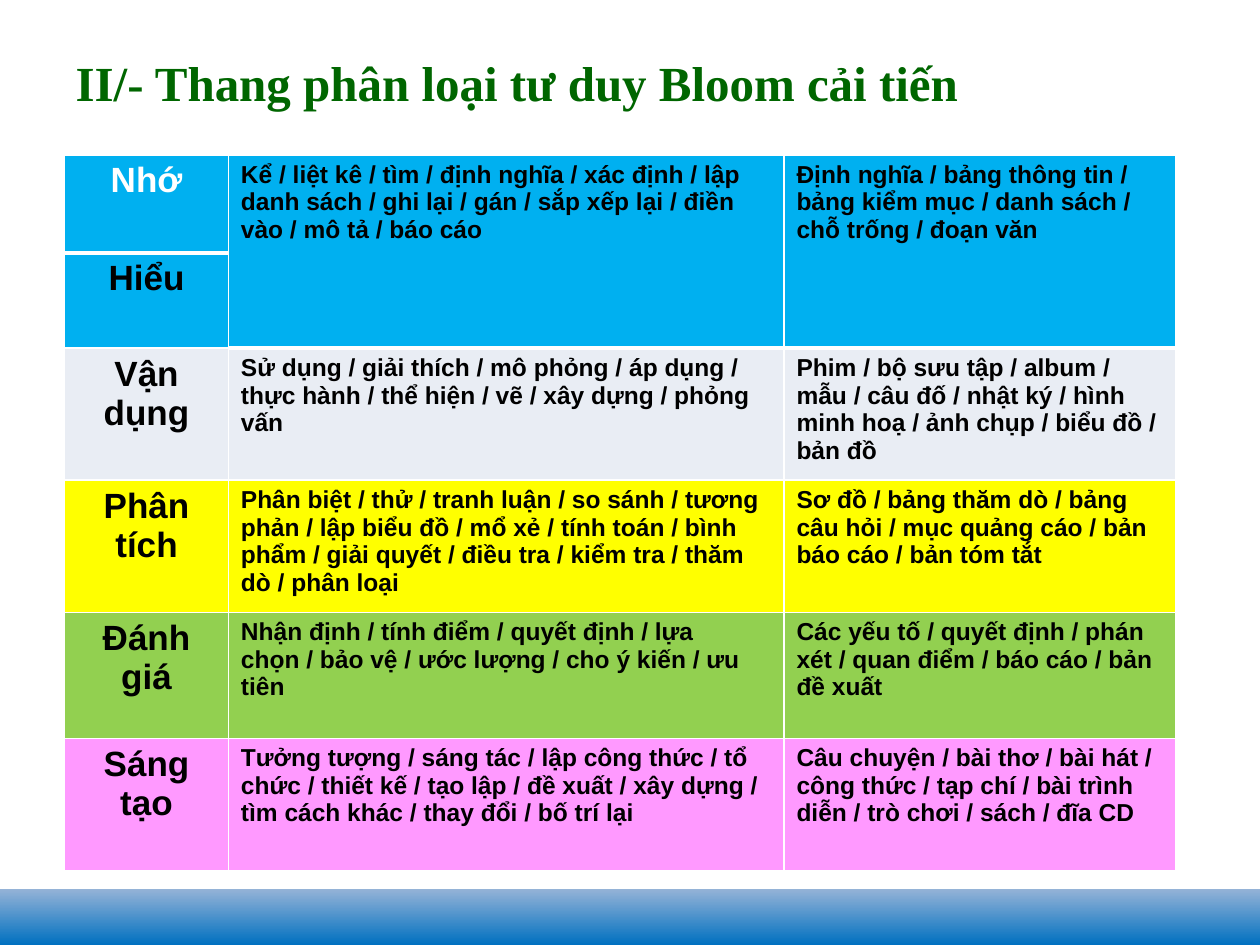
"""Build the slide on the revised Bloom scale of thinking."""
from dataclasses import dataclass

from lxml.etree import SubElement
from pptx import Presentation
from pptx.dml.color import RGBColor
from pptx.enum.shapes import MSO_SHAPE
from pptx.enum.text import MSO_ANCHOR, PP_ALIGN
from pptx.oxml.ns import qn
from pptx.util import Pt


@dataclass(frozen=True)
class Theme:
    title_font: str = "Times New Roman"
    table_font: str = "Arial"
    title_size: int = 28
    level_size: int = 20
    detail_size: int = 14
    title: str = "006600"
    text: str = "000000"
    white: str = "FFFFFF"
    blue: str = "00B0F0"
    pale: str = "E9EDF4"
    yellow: str = "FFFF00"
    green: str = "92D050"
    pink: str = "FF99FF"
    band_dark: str = "0070C0"
    band_light: str = "95B3D7"


theme = Theme()


def add_run(p, text, font, size, color):
    r = p.add_run()
    r.text = text
    r.font.name = font
    r.font.size = Pt(size)
    r.font.bold = True
    r.font.color.rgb = RGBColor.from_string(color)


def add_border(cell, side, width):
    ln = SubElement(cell._tc.get_or_add_tcPr(), qn(f"a:ln{side}"), w=str(Pt(width)))
    fill = SubElement(ln, qn("a:solidFill"))
    SubElement(fill, qn("a:srgbClr"), val=theme.white)


prs = Presentation()
prs.slide_width, prs.slide_height = Pt(720), Pt(540)
s = prs.slides.add_slide(prs.slide_layouts[5])

band = s.shapes.add_shape(MSO_SHAPE.RECTANGLE, Pt(0), Pt(508), Pt(720), Pt(32))
band.shadow.inherit = False
band.line.fill.background()
band.fill.gradient()
band.fill.gradient_angle = 90
for stop, position, color in zip(band.fill.gradient_stops, (0, 1), (theme.band_dark, theme.band_light)):
    stop.position = position
    stop.color.rgb = RGBColor.from_string(color)

title = s.shapes.title
title.left, title.top, title.width, title.height = Pt(36), Pt(21.6), Pt(664), Pt(50)
tf = title.text_frame
tf.word_wrap = True
tf.vertical_anchor = MSO_ANCHOR.MIDDLE
p = tf.paragraphs[0]
p.alignment = PP_ALIGN.LEFT
add_run(p, "II/- Thang phân loại tư duy Bloom cải tiến", theme.title_font, theme.title_size, theme.title)

levels = [
    (theme.blue, 56, "Nhớ",
     "Kể / liệt kê / tìm / định nghĩa / xác định / lập danh sách / ghi lại / gán / sắp xếp lại / "
     "điền vào / mô tả / báo cáo",
     "Định nghĩa / bảng thông tin / bảng kiểm mục / danh sách / chỗ trống / đoạn văn"),
    (theme.blue, 54, "Hiểu", "", ""),
    (theme.pale, 75.5, "Vận dụng",
     "Sử dụng / giải thích / mô phỏng / áp dụng / thực hành / thể hiện / vẽ / xây dựng / phỏng vấn",
     "Phim / bộ sưu tập / album / mẫu / câu đố / nhật ký / hình minh hoạ / ảnh chụp / biểu đồ / bản đồ"),
    (theme.yellow, 75.5, "Phân tích",
     "Phân biệt / thử / tranh luận / so sánh / tương phản / lập biểu đồ / mổ xẻ / tính toán / "
     "bình phẩm / giải quyết / điều tra / kiểm tra / thăm dò / phân loại",
     "Sơ đồ / bảng thăm dò / bảng câu hỏi / mục quảng cáo / bản báo cáo / bản tóm tắt"),
    (theme.green, 72, "Đánh giá",
     "Nhận định / tính điểm / quyết định / lựa chọn / bảo vệ / ước lượng / cho ý kiến / ưu tiên",
     "Các yếu tố / quyết định / phán xét / quan điểm / báo cáo / bản đề xuất"),
    (theme.pink, 75.5, "Sáng tạo",
     "Tưởng tượng / sáng tác / lập công thức / tổ chức / thiết kế / tạo lập / đề xuất / xây dựng / "
     "tìm cách khác / thay đổi / bố trí lại",
     "Câu chuyện / bài thơ / bài hát / công thức / tạp chí / bài trình diễn / trò chơi / sách / đĩa CD"),
]
column_widths = (93.5, 317.5, 224)
heavy_tops = {(1, 0), (2, 1), (2, 2)}

table = s.shapes.add_table(
    len(levels), len(column_widths), Pt(37), Pt(88.5),
    Pt(sum(column_widths)), Pt(sum(level[1] for level in levels))).table
table.first_row = False
table.horz_banding = False
for column, width in zip(table.columns, column_widths):
    column.width = Pt(width)
for col in (1, 2):
    table.cell(0, col).merge(table.cell(1, col))

for row, (fill, height, *texts) in enumerate(levels):
    table.rows[row].height = Pt(height)
    for col, text in enumerate(texts):
        cell = table.cell(row, col)
        top = 3 if (row, col) in heavy_tops else 1
        bottom = 3 if row == 0 else 1
        for side, width in (("L", 1), ("R", 1), ("T", top), ("B", bottom)):
            add_border(cell, side, width)
        cell.fill.solid()
        cell.fill.fore_color.rgb = RGBColor.from_string(fill)
        if text:
            p = cell.text_frame.paragraphs[0]
            p.alignment = PP_ALIGN.LEFT if col else PP_ALIGN.CENTER
            size = theme.detail_size if col else theme.level_size
            color = theme.white if row == col == 0 else theme.text
            add_run(p, text, theme.table_font, size, color)

prs.save("out.pptx")
